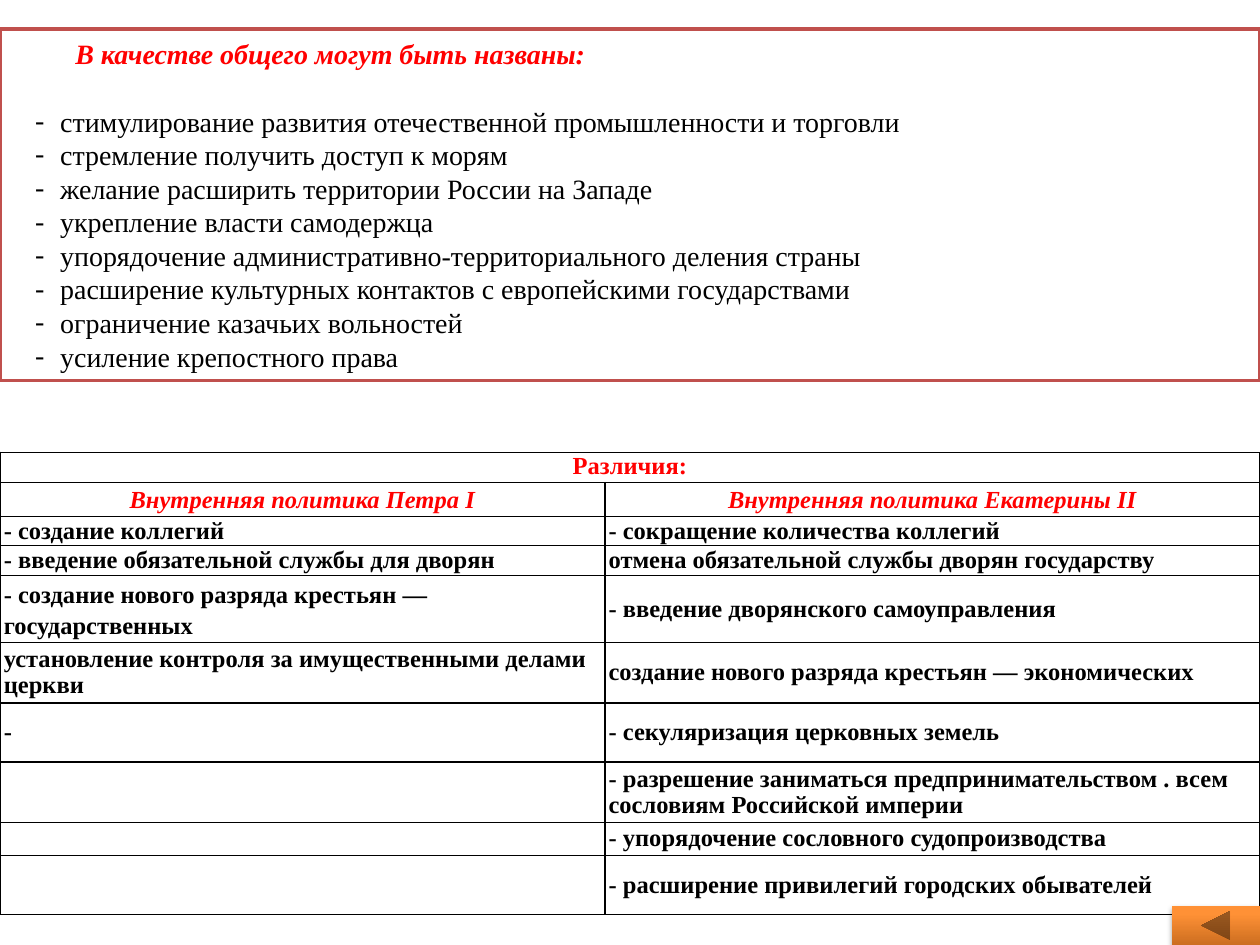
from dataclasses import dataclass

from lxml import etree
from pptx import Presentation
from pptx import util as u
from pptx.dml.color import RGBColor
from pptx.enum import shapes, text
from pptx.oxml import ns


@dataclass(frozen=True)
class Theme:
    font: str = "Times New Roman"
    list_size: float = 16
    table_size: float = 14
    ink: str = "000000"
    accent: str = "FF0000"
    frame: str = "C0504D"
    paper: str = "FFFFFF"
    button: tuple = ("CC6E20", "FF9136")


THEME = Theme()
WIDTH, HEIGHT = 10, 7.5

COMMON_TITLE = "В качестве общего могут быть названы:"
COMMON = [
    "стимулирование развития отечественной промышленности и торговли",
    "стремление получить доступ к морям",
    "желание расширить территории России на Западе",
    "укрепление власти самодержца",
    "упорядочение административно-территориального деления страны",
    "расширение культурных контактов с европейскими государствами",
    "ограничение казачьих вольностей",
    "усиление крепостного права",
]

TABLE_TITLE = "Различия:"
RULERS = ("Внутренняя политика Петра I", "Внутренняя политика Екатерины II")
# Row height, then the text and line spacing of each ruler's cell
DIFFERENCES = [
    (0.23, ("- создание коллегий", 15.4), ("- сокращение количества коллегий", 15.4)),
    (0.24, ("- введение обязательной службы для дворян", 15.1),
     ("отмена обязательной службы дворян государству", 14.9)),
    (0.53, ("- создание нового разряда крестьян — государственных", None),
     ("- введение дворянского самоуправления", 15.4)),
    (0.48, ("установление контроля за имущественными делами церкви", 15.1),
     ("создание нового разряда крестьян — экономических", 15.1)),
    (0.47, ("-", 15.1), ("- секуляризация церковных земель", 15.4)),
    (0.48, ("", 15.1),
     ("- разрешение заниматься предпринимательством . всем сословиям Российской империи", 15.1)),
    (0.26, ("", 15.1), ("- упорядочение сословного судопроизводства", 15.1)),
    (0.47, ("", 15.1), ("- расширение привилегий городских обывателей", 15.4)),
]


def color(value):
    return RGBColor.from_string(value)


def add_xml(parent, tag, **attributes):
    return etree.SubElement(parent, ns.qn(tag), attributes)


def write(para, words, size, ink=THEME.ink, bold=False, italic=False,
          align=text.PP_ALIGN.LEFT, spacing=None, after=0):
    para.alignment = align
    para.space_after = u.Pt(after)
    if spacing:
        para.line_spacing = spacing
    if not words:
        add_xml(para._p, "a:endParaRPr", sz=str(int(size * 100)))
        return
    span = para.add_run()
    span.text = words
    font = span.font
    font.name, font.size, font.bold, font.italic = THEME.font, u.Pt(size), bold, italic
    font.color.rgb = color(ink)


def indent(para, left, first=0, bullet=None):
    """Set the paragraph's indents in inches and, if given, its bullet character."""
    properties = para._p.get_or_add_pPr()
    properties.set("marL", str(u.Inches(left)))
    properties.set("indent", str(u.Inches(first)))
    if bullet:
        add_xml(properties, "a:buFont", typeface=THEME.font)
        add_xml(properties, "a:buChar", char=bullet)


def add_common_box(page, left, top, width, height):
    box = page.shapes.add_shape(shapes.MSO_SHAPE.RECTANGLE, *map(u.Inches, (left, top, width, height)))
    box.shadow.inherit = False
    box.fill.solid()
    box.fill.fore_color.rgb = color(THEME.paper)
    box.line.color.rgb = color(THEME.frame)
    box.line.width = u.Pt(2)
    frame = box.text_frame
    frame.word_wrap = True
    frame.vertical_anchor = text.MSO_ANCHOR.MIDDLE
    title = frame.paragraphs[0]
    write(title, COMMON_TITLE, THEME.list_size, THEME.accent, bold=True, italic=True,
          after=THEME.list_size * 1.2)
    indent(title, 0.5)
    for item in COMMON:
        para = frame.add_paragraph()
        write(para, item, THEME.list_size, spacing=u.Pt(THEME.list_size * 1.2))
        indent(para, 0.38, -0.2, "-")


def style_cell(cell, anchor):
    cell.margin_left = cell.margin_right = u.Inches(0.03)
    cell.margin_top = cell.margin_bottom = 0
    cell.vertical_anchor = anchor
    properties = cell._tc.get_or_add_tcPr()
    for side in ("a:lnL", "a:lnR", "a:lnT", "a:lnB"):
        line = add_xml(properties, side, w=str(u.Pt(1)))
        add_xml(add_xml(line, "a:solidFill"), "a:srgbClr", val=THEME.ink)
    cell.fill.background()


def add_differences_table(page, left, top, width):
    heights = [0.24, 0.27] + [row[0] for row in DIFFERENCES]
    frame = page.shapes.add_table(len(heights), 2, *map(u.Inches, (left, top, width, sum(heights))))
    table = frame.table
    table.first_row = table.horz_banding = False
    for column, share in zip(table.columns, (0.48, 0.52)):
        column.width = u.Inches(width * share)
    for number, (row, height) in enumerate(zip(table.rows, heights)):
        row.height = u.Inches(height)
        for cell in row.cells:
            style_cell(cell, text.MSO_ANCHOR.TOP if number < 2 else text.MSO_ANCHOR.MIDDLE)

    def fill_cell(row, column, words, spacing, **style):
        write(table.cell(row, column).text_frame.paragraphs[0], words, THEME.table_size,
              bold=True, spacing=spacing, **style)

    heading = dict(ink=THEME.accent, align=text.PP_ALIGN.CENTER)
    table.cell(0, 0).merge(table.cell(0, 1))
    fill_cell(0, 0, TABLE_TITLE, u.Pt(15.4), **heading)
    for column, ruler in enumerate(RULERS):
        fill_cell(1, column, ruler, 1.15, italic=True, **heading)
    for number, (_, *cells) in enumerate(DIFFERENCES, start=2):
        for column, (words, points) in enumerate(cells):
            fill_cell(number, column, words, u.Pt(points) if points else 1.15)


def add_back_button(page, left, top, width, height):
    button = page.shapes.add_shape(shapes.MSO_SHAPE.ACTION_BUTTON_BACK_OR_PREVIOUS,
                                   *map(u.Inches, (left, top, width, height)))
    button.line.fill.background()
    button.fill.gradient()
    button.fill.gradient_angle = 90
    for stop, value, position in zip(button.fill.gradient_stops, THEME.button, (0, 0.8)):
        stop.color.rgb = color(value)
        stop.position = position
    button.shadow.inherit = False
    effects = button._element.spPr.find(ns.qn("a:effectLst"))
    shadow = add_xml(effects, "a:outerShdw", blurRad=str(u.Pt(3.1)), dist=str(u.Pt(1.8)),
                     dir="5400000", rotWithShape="0")
    add_xml(add_xml(shadow, "a:srgbClr", val=THEME.ink), "a:alpha", val="35000")


def main():
    deck = Presentation()
    deck.slide_width, deck.slide_height = u.Inches(WIDTH), u.Inches(HEIGHT)
    page = deck.slides.add_slide(deck.slide_layouts[6])
    add_common_box(page, 0, 0.23, WIDTH, 2.79)
    add_differences_table(page, 0, 3.59, WIDTH)
    add_back_button(page, WIDTH - 0.7, HEIGHT - 0.31, 0.7, 0.31)
    deck.save("out.pptx")


if __name__ == "__main__":
    main()
